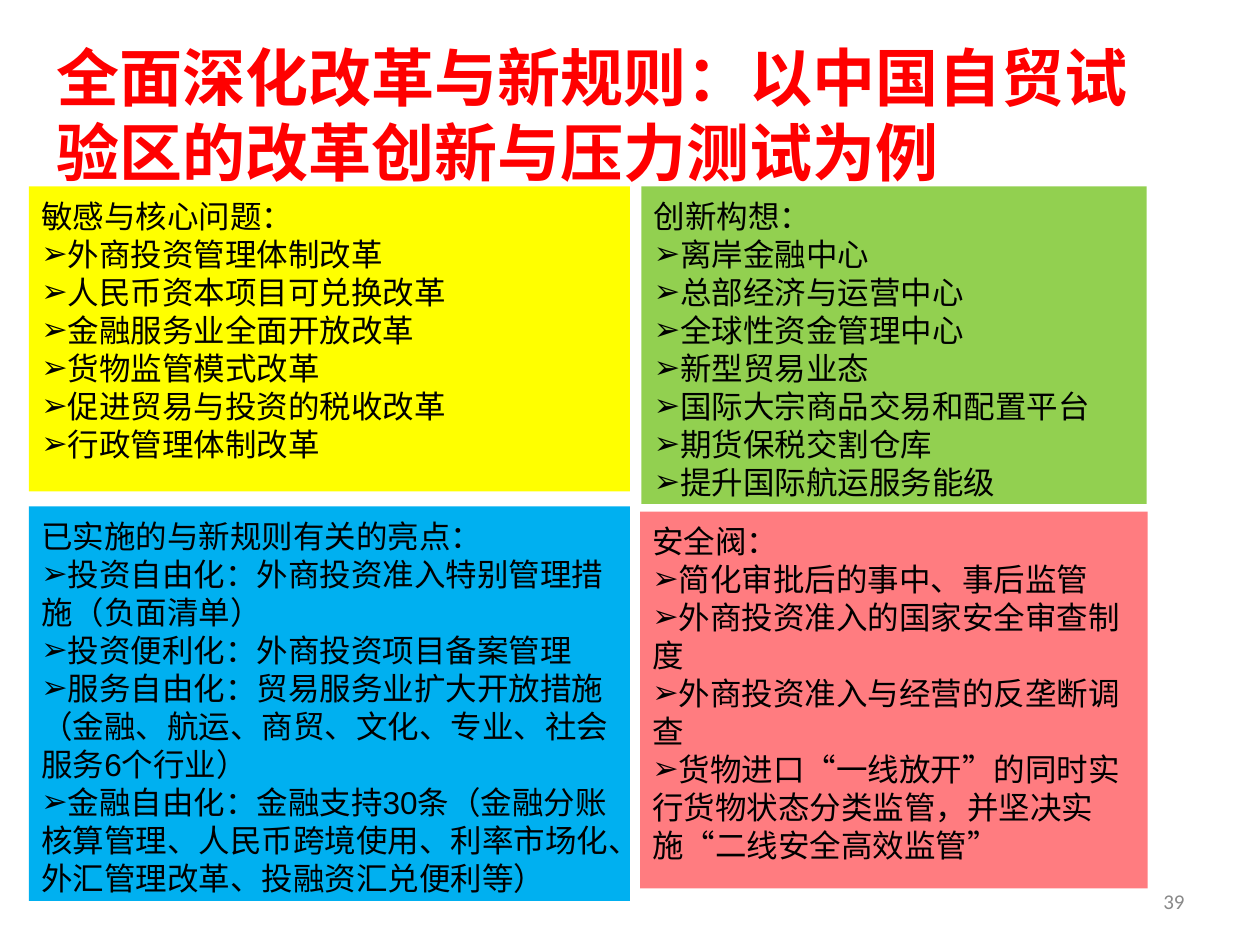
from lxml.etree import SubElement
from pptx import Presentation
from pptx.dml.color import RGBColor
from pptx.enum.lang import MSO_LANGUAGE_ID
from pptx.enum.shapes import MSO_SHAPE
from pptx.enum.text import MSO_ANCHOR, MSO_AUTO_SIZE, PP_ALIGN
from pptx.oxml.ns import qn
from pptx.util import Inches, Pt

COLORS = {
    "title": "FF0000", "text": "000000", "number": "898989",
    "issues": "FFFF00", "ideas": "92D050",
    "highlights": "00B0F0", "safety": "FF7C80",
}
CJK_FONT = "Noto Sans CJK SC"

PANELS = [
    ((0.23, 1.48, 4.77, 2.42), "issues", "Calibri", "敏感与核心问题：", [
        "外商投资管理体制改革",
        "人民币资本项目可兑换改革",
        "金融服务业全面开放改革",
        "货物监管模式改革",
        "促进贸易与投资的税收改革",
        "行政管理体制改革",
    ]),
    ((5.09, 1.48, 4.01, 2.52), "ideas", "Arial", "创新构想：", [
        "离岸金融中心",
        "总部经济与运营中心",
        "全球性资金管理中心",
        "新型贸易业态",
        "国际大宗商品交易和配置平台",
        "期货保税交割仓库",
        "提升国际航运服务能级",
    ]),
    ((0.23, 4.02, 4.77, 3.13), "highlights", "Arial", "已实施的与新规则有关的亮点：", [
        "投资自由化：外商投资准入特别管理措施（负面清单）",
        "投资便利化：外商投资项目备案管理",
        "服务自由化：贸易服务业扩大开放措施（金融、航运、商贸、文化、专业、社会服务6个行业）",
        "金融自由化：金融支持30条（金融分账核算管理、人民币跨境使用、利率市场化、"
        "外汇管理改革、投融资汇兑便利等）",
    ]),
    ((5.08, 4.06, 4.03, 2.99), "safety", "Arial", "安全阀：", [
        "简化审批后的事中、事后监管",
        "外商投资准入的国家安全审查制度",
        "外商投资准入与经营的反垄断调查",
        "货物进口“一线放开”的同时实行货物状态分类监管，并坚决实施“二线安全高效监管”",
    ]),
]


def add_text(p, text, size=18, font="Arial", color="text", bold=False,
             align=PP_ALIGN.LEFT, pitch=None, bullet=None):
    p.alignment = align
    p.space_before = p.space_after = Pt(0)
    if pitch:
        p.line_spacing = Pt(pitch)
    if bullet:
        pPr = p._p.get_or_add_pPr()
        pPr.set("marL", "0")
        pPr.set("indent", "0")
        SubElement(pPr, qn("a:buFont"), typeface="Arial")
        SubElement(pPr, qn("a:buChar"), char=bullet)
    r = p.add_run()
    r.text = text
    r.font.size = Pt(size)
    r.font.bold = bold
    r.font.name = font
    r.font.language_id = MSO_LANGUAGE_ID.SIMPLIFIED_CHINESE
    r.font.color.rgb = RGBColor.from_string(COLORS[color])
    SubElement(r._r.get_or_add_rPr(), qn("a:ea"), typeface=CJK_FONT)
    return r


def set_frame(sp, anchor=MSO_ANCHOR.TOP, top=0.05):
    tf = sp.text_frame
    tf.word_wrap = True
    tf.auto_size = MSO_AUTO_SIZE.NONE
    tf.vertical_anchor = anchor
    tf.margin_left = tf.margin_right = Inches(0.1)
    tf.margin_top, tf.margin_bottom = Inches(top), Inches(0.05)
    return tf


def place_title(s, box):
    sp = s.shapes.title
    sp.left, sp.top, sp.width, sp.height = map(Inches, box)
    tf = set_frame(sp, top=0.1)
    add_text(tf.paragraphs[0], "全面深化改革与新规则：以中国自贸试验区的改革创新与压力测试为例",
             size=36, font=CJK_FONT, color="title", bold=True, pitch=43)


def add_panel(s, box, fill, font, heading, items):
    sp = s.shapes.add_shape(MSO_SHAPE.RECTANGLE, *map(Inches, box))
    sp.shadow.inherit = False
    sp.fill.solid()
    sp.fill.fore_color.rgb = RGBColor.from_string(COLORS[fill])
    sp.line.fill.background()
    tf = set_frame(sp, top=0.08)
    add_text(tf.paragraphs[0], heading, font=font, pitch=21.7)
    for item in items:
        add_text(tf.add_paragraph(), item, font=font, pitch=21.7, bullet="➢")


def add_page_number(s, box, number):
    sp = s.shapes.add_textbox(*map(Inches, box))
    tf = set_frame(sp, MSO_ANCHOR.MIDDLE)
    add_text(tf.paragraphs[0], number, size=12, font="Calibri",
             color="number", align=PP_ALIGN.RIGHT)


def main():
    prs = Presentation()
    prs.slide_width, prs.slide_height = Inches(10), Inches(7.5)
    s = prs.slides.add_slide(prs.slide_layouts[5])
    place_title(s, (0.35, 0.21, 9, 1.25))
    for panel in PANELS:
        add_panel(s, *panel)
    add_page_number(s, (7.17, 6.95, 2.33, 0.4), "39")
    prs.save("out.pptx")


if __name__ == "__main__":
    main()
